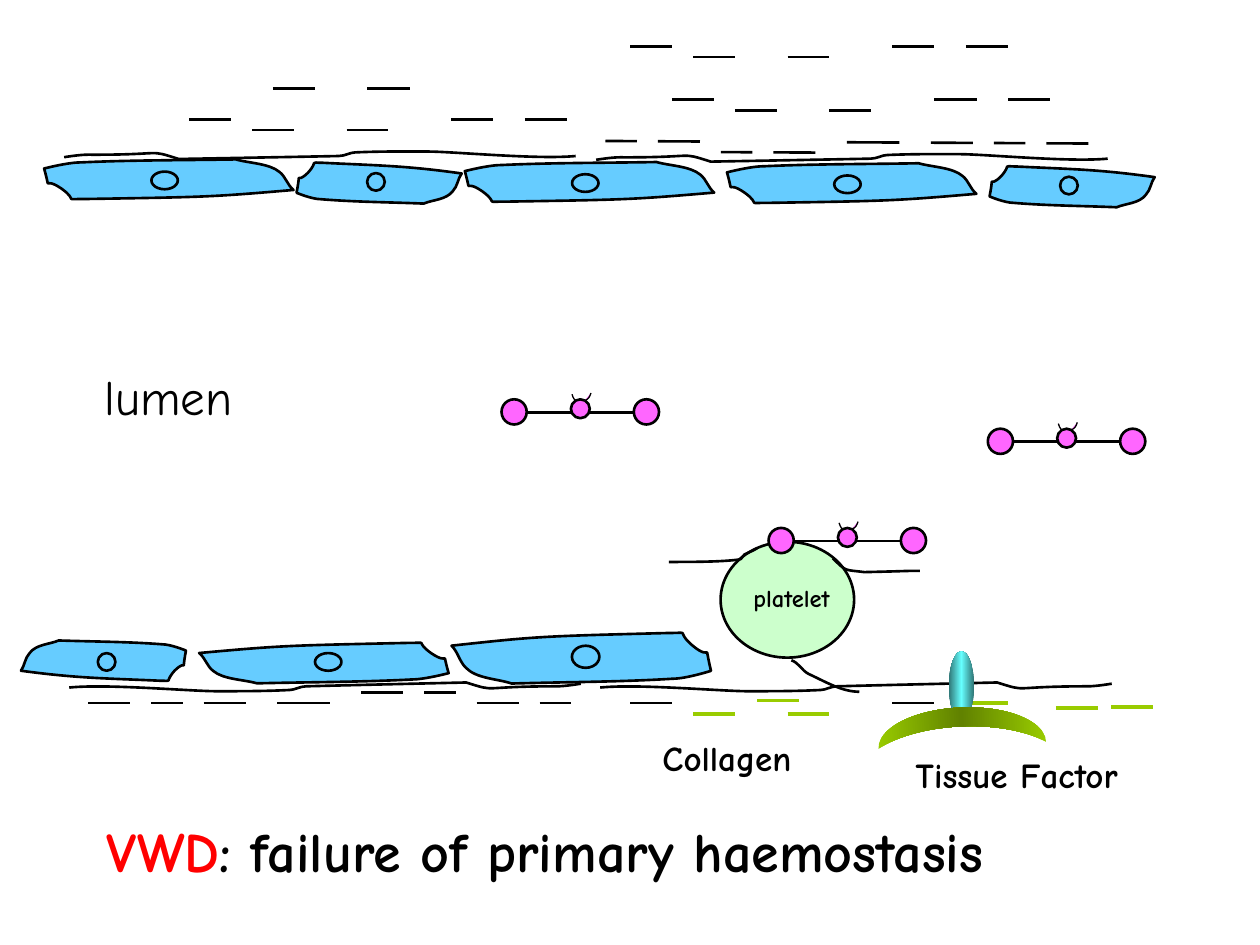
from copy import deepcopy
from math import cos, radians, sin

from pptx import Presentation
from pptx.dml.color import RGBColor
from pptx.enum.shapes import MSO_CONNECTOR, MSO_SHAPE
from pptx.enum.text import MSO_AUTO_SIZE
from pptx.oxml.ns import qn
from pptx.oxml.xmlchemy import OxmlElement
from pptx.util import Pt

LINE = MSO_CONNECTOR.STRAIGHT
OVAL, MOON = MSO_SHAPE.OVAL, MSO_SHAPE.MOON
FIT = MSO_AUTO_SIZE.SHAPE_TO_FIT_TEXT

BLACK, RED, GREEN = "000000", "FF0000", "99CC00"
BLUE, PINK, MINT = "66CCFF", "FF66FF", "CCFFCC"
TILT = 180.3

WALL = [(0, 2.9), (21.6, 0.7, 69.1, 5, 84.2, 5), (97.9, 5, 112.3, 5, 126, 4.3),
        (128.9, 4.3, 131.8, 2.2, 135.4, 2.2), (165.6, 1.4, 226.8, 0, 226.8, 0),
        (245.5, 5.8, 232.6, 2.2, 278.6, 2.2), (283.7, 2.2, 292.3, 0.7, 292.3, 0.7)]
SHORT = [(79.2, 23), (46.8, 21.6, 31.7, 21.6, 0, 17.3), (2.2, 14.4, 2.2, 10.1, 5, 7.2),
         (8.6, 2.2, 16.6, 2.2, 21.6, 0), (41.8, 0.7, 61.2, 0.7, 80.6, 2.2),
         (85.7, 2.2, 94.3, 5.8, 94.3, 5.8), (91.4, 20.9, 95.8, 9.4, 87.8, 17.3),
         (81.4, 24.5, 87.8, 23, 79.2, 23)]
LONG = [(119.5, 1.4), (49, 2.9, 47.5, 2.9, 0, 7.2), (3.6, 10.1, 4.3, 14.4, 7.9, 17.3),
        (13.7, 22.3, 25.2, 22.3, 33.1, 24.5), (62.6, 23.8, 92.9, 23.8, 121.7, 22.3),
        (128.9, 22.3, 142.6, 18.7, 142.6, 18.7), (138.2, 3.6, 144, 15.1, 132.5, 7.2),
        (122.4, 0, 132.5, 1.4, 119.5, 1.4)]
SHORT_CELL = (SHORT, 96, 24, (43.9, 7.2, 10.1, 10.1))
LONG_CELL = (LONG, 144, 24, (66.2, 7.2, 15.1, 10.1))
FIBRES = [(0, 0, 24), (36, 0, 18), (66, 0, 24), (108, 0, 30),
          (156, -6, 24), (192, -6, 18), (222, 0, 24), (258, 0, 18)]
CLUSTER = [(0, 0), (150, 0), (192, 0), (36, 6), (90, 6)]
ARMS = [
    [(432.7, 313.2), (430.6, 314.6, 428.4, 315.4, 425.5, 316.8),
     (424.1, 317.5, 424.1, 319.7, 422.6, 319.7), (412.6, 321.1, 395.3, 321.1, 382.3, 321.1)],
    [(475.9, 319), (483.8, 326.9, 482.4, 325.4, 493.9, 326.9),
     (524.9, 326.2, 514.1, 326.2, 525.6, 326.2)],
    [(452.2, 377.3), (456.5, 378.7, 457.9, 383, 462.2, 385.2),
     (471.6, 389.5, 481, 395.3, 491, 395.3)],
]
TICKS = [
    [(42.5, 1.4), (42.5, 0.7, 41, 0, 40.3, -2.9)],
    [(47.5, 0.7), (49.7, 0, 50.4, -1.4, 51.1, -3.6)],
]


def rgb(value):
    return RGBColor.from_string(value)


def pairs(curve):
    return [step[i:i + 2] for step in curve for i in range(0, len(step), 2)]


def place(points, x, y, w=0, h=0, rot=0, kx=1, ky=1):
    ca, sa = cos(radians(rot)), sin(radians(rot))
    cx, cy = w * kx / 2, h * ky / 2
    moved = [(px * kx - cx, py * ky - cy) for px, py in points]
    return [(x + cx + px * ca - py * sa, y + cy + px * sa + py * ca) for px, py in moved]


class Board:
    font = "Comic Neue"

    def __init__(self, prs):
        self.s = prs.slides.add_slide(prs.slide_layouts[6])

    def paint(self, sp, fill, width):
        sp.shadow.inherit = False
        if fill:
            sp.fill.solid()
            sp.fill.fore_color.rgb = rgb(fill)
        else:
            sp.fill.background()
        if width:
            sp.line.color.rgb = rgb(BLACK)
            sp.line.width = Pt(width)
        else:
            sp.line.fill.background()

    def shape(self, kind, x, y, w, h, fill=None, width=1.5):
        sp = self.s.shapes.add_shape(kind, Pt(x), Pt(y), Pt(w), Pt(h))
        self.paint(sp, fill, width)
        return sp

    def gradient(self, kind, x, y, w, h, edge, middle, angle, rot=0):
        sp = self.shape(kind, x, y, w, h, width=0)
        sp.rotation = rot
        sp.fill.gradient()
        sp.fill.gradient_angle = angle
        first, second = sp.fill.gradient_stops
        for stop, color, position in ((first, edge, 0), (second, middle, 0.5)):
            stop.color.rgb = rgb(color)
            stop.position = position
        stops = sp._element.spPr.find(".//" + qn("a:gsLst"))
        last = deepcopy(stops[0])
        last.set("pos", "100000")
        stops.append(last)

    def curve(self, points, fill=None, width=1.5, close=False):
        pts = [(Pt(x), Pt(y)) for x, y in points]
        builder = self.s.shapes.build_freeform(*pts[0], scale=1.0)
        builder.add_line_segments(pts[1:], close=close)
        sp = builder.convert_to_shape()
        self.paint(sp, fill, width)
        segments = list(sp._element.iter(qn("a:lnTo")))
        for i in range(0, len(segments), 3):
            bezier = OxmlElement("a:cubicBezTo")
            segments[i].addprevious(bezier)
            for segment in segments[i:i + 3]:
                bezier.append(segment[0])
                segment.getparent().remove(segment)

    def line(self, start, end, color=BLACK, width=1.5):
        c = self.s.shapes.add_connector(LINE, *(Pt(v) for v in (*start, *end)))
        c.line.color.rgb = rgb(color)
        c.line.width = Pt(width)
        c._element.spPr.append(OxmlElement("a:effectLst"))

    def dash(self, x, y, color=BLACK):
        self.line((x, y), (x + 24, y), color, 2.25 if color == GREEN else 1.5)

    def text(self, x, y, w, h, runs, size, bold=True):
        tf = self.s.shapes.add_textbox(Pt(x), Pt(y), Pt(w), Pt(h)).text_frame
        tf.word_wrap = False
        tf.auto_size = FIT
        p = tf.paragraphs[0]
        for text, color in runs:
            r = p.add_run()
            r.text = text
            for name, value in {"name": self.font, "size": Pt(size), "bold": bold}.items():
                setattr(r.font, name, value)
            r.font.color.rgb = rgb(color)

    def wall(self, x, y, rot=0):
        self.curve(place(pairs(WALL), x, y, 293, 5.8, rot))

    def cell(self, kind, x, y, rot=0, kx=1, ky=1):
        curve, w, h, (nx, ny, nw, nh) = kind
        self.curve(place(pairs(curve), x, y, w, h, rot, kx, ky), BLUE, close=True)
        center = [(nx + nw / 2, ny + nh / 2)]
        cx, cy = place(center, x, y, w, h, rot, kx, ky)[0]
        nw, nh = nw * kx, nh * ky
        self.shape(OVAL, cx - nw / 2, cy - nh / 2, nw, nh, BLUE)

    def fibres(self, x, y, rot=0):
        for dx, dy, length in FIBRES:
            self.line(*place([(dx, dy), (dx + length, dy)], x, y, 276, 0, rot))

    def cluster(self, x, y, colors=(BLACK,) * 5):
        for (dx, dy), color in zip(CLUSTER, colors):
            self.dash(x + dx, y + dy, color)

    def factor(self, x, y):
        self.shape(OVAL, x, y, 14.4, 14.4, PINK)
        self.line((x + 14.4, y + 7.4), (x + 79.2, y + 7.4))
        self.shape(OVAL, x + 39.6, y, 10.8, 10.8, PINK)
        self.shape(OVAL, x + 75.6, y, 14.4, 14.4, PINK)
        for tick in TICKS:
            self.curve(place(pairs(tick), x, y), PINK, 0.75)


def main():
    prs = Presentation()
    prs.slide_width, prs.slide_height = Pt(720), Pt(540)
    b = Board(prs)
    for x, y, rot in ((39.6, 390, 0), (343, 390, 0), (340, 87, TILT), (36, 85.5, TILT)):
        b.wall(x, y, rot)
    b.fibres(50.4, 401.8)
    b.fibres(346, 81.3, TILT)
    b.cluster(360, 401.8, (BLACK, BLACK, GREEN, GREEN, GREEN))
    for x, y in ((108, 68.4), (384, 57), (360, 26.6)):
        b.cluster(x, y)
    for x in (156, 210):
        b.dash(x, 50.4)
    for x, y in ((603.4, 404.6), (635, 404), (432.7, 400.3)):
        b.dash(x, y, GREEN)
    b.shape(OVAL, 411.8, 309.6, 76.3, 66.2, MINT)
    for arm in ARMS:
        b.curve(pairs(arm))
    b.text(423.4, 329.8, 66.2, 23.8, [("platelet", BLACK)], 14)
    b.cell(SHORT_CELL, 12, 366)
    b.cell(LONG_CELL, 113.8, 366)
    b.cell(LONG_CELL, 258, 360, kx=1.04, ky=1.25)
    for kind, x, y in ((SHORT_CELL, 563.8, 94.3), (LONG_CELL, 414, 93.6),
                       (LONG_CELL, 264.2, 92.9), (SHORT_CELL, 167.8, 92.2),
                       (LONG_CELL, 23.8, 91.4)):
        b.cell(kind, x, y, TILT)
    b.text(54, 463, 598.3, 45.4, [("VWD", RED), (": failure of primary haemostasis", BLACK)], 32)
    b.text(371.5, 417.6, 91.4, 31, [("Collagen", BLACK)], 20)
    b.text(516.2, 427, 146.9, 31, [("Tissue Factor", BLACK)], 20)
    b.text(52.6, 206, 88.6, 41, [("lumen", BLACK)], 28, bold=False)
    b.gradient(OVAL, 542.2, 372.2, 14.4, 39.6, "2F7676", "66FFFF", 0)
    b.gradient(MOON, 538.6, 367.2, 21.6, 95.8, GREEN, "618200", 270, 87.6)
    for x, y in ((439.2, 301.7), (286.6, 228.2), (564.5, 245)):
        b.factor(x, y)
    prs.save("out.pptx")


if __name__ == "__main__":
    main()
